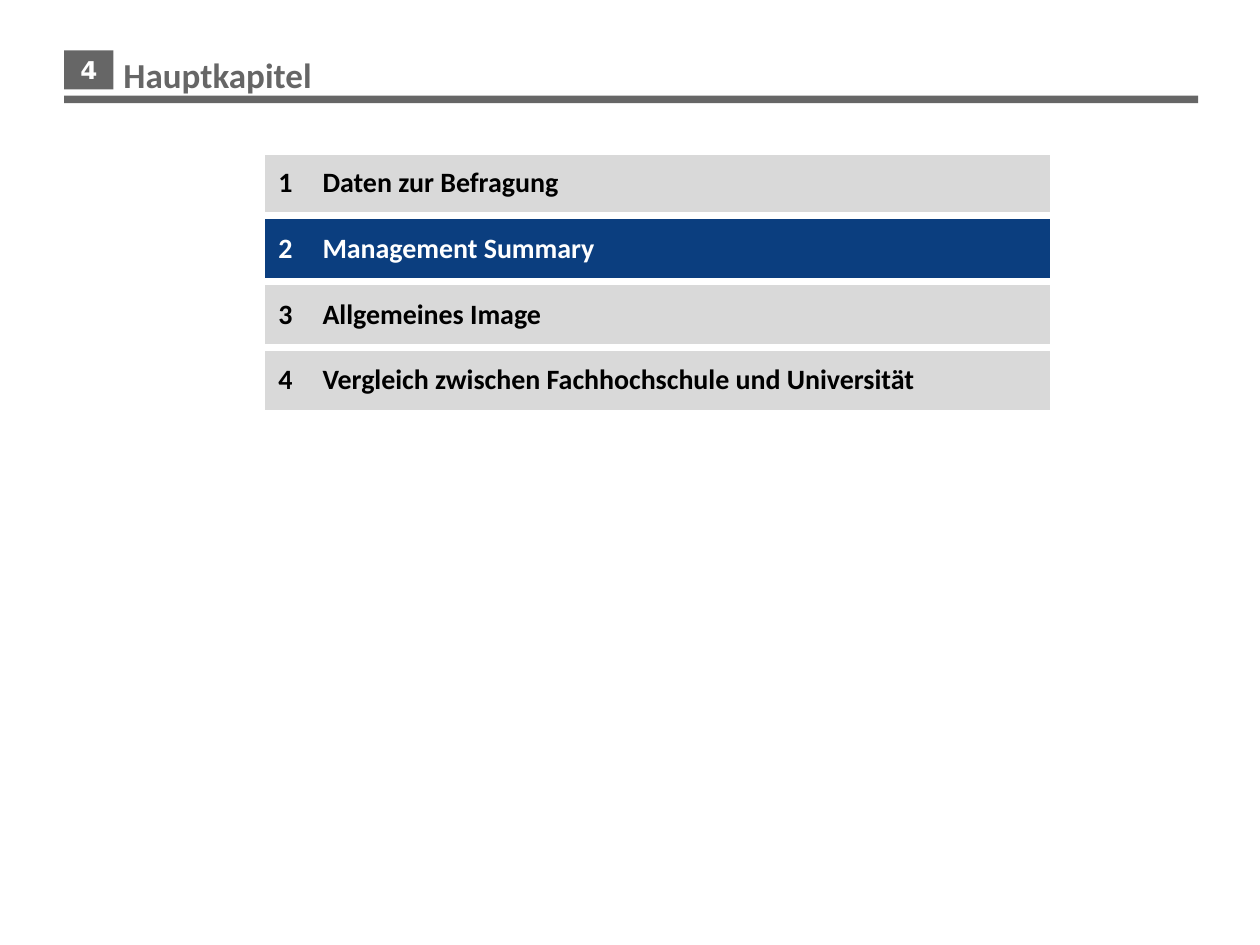
from dataclasses import dataclass

from lxml import etree
from pptx import Presentation
from pptx.dml.color import RGBColor
from pptx.enum import shapes, text
from pptx.oxml import ns
from pptx.util import Inches, Pt


@dataclass(frozen=True)
class Theme:
    gray: str = "666666"
    row: str = "D9D9D9"
    active_row: str = "0B3E7F"
    black: str = "000000"
    white: str = "FFFFFF"
    font: str = "Calibri"
    number_font: str = "DejaVu Sans"
    title_size: int = 20
    chapter_size: int = 16
    number_size: int = 14
    outer_border: float = 6
    inner_border: float = 4.5


THEME = Theme()
CHAPTERS = [
    "Daten zur Befragung",
    "Management Summary",
    "Allgemeines Image",
    "Vergleich zwischen Fachhochschule und Universität",
]
ACTIVE_CHAPTER = 2


def write(frame, content, *, size, color, font=THEME.font,
          align=text.PP_ALIGN.LEFT):
    paragraph = frame.paragraphs[0]
    paragraph.alignment = align
    run = paragraph.add_run()
    run.text = content
    run.font.name = font
    run.font.size = Pt(size)
    run.font.bold = True
    run.font.color.rgb = RGBColor.from_string(color)


def add_bar(slide, left, top, width, height):
    bar = slide.shapes.add_shape(
        shapes.MSO_SHAPE.RECTANGLE,
        Inches(left), Inches(top), Inches(width), Inches(height))
    bar.shadow.inherit = False
    bar.fill.solid()
    bar.fill.fore_color.rgb = RGBColor.from_string(THEME.gray)
    bar.line.fill.background()
    return bar


def add_page_number(slide, number):
    badge = add_bar(slide, 0.51, 0.4, 0.39, 0.31)
    badge.text_frame.word_wrap = False
    badge.text_frame.vertical_anchor = text.MSO_ANCHOR.MIDDLE
    write(badge.text_frame, number, size=THEME.number_size, color=THEME.white,
          font=THEME.number_font, align=text.PP_ALIGN.CENTER)


def set_title(slide, content):
    title = slide.shapes.title
    title.left, title.top = Inches(0.88), Inches(0.36)
    title.width, title.height = Inches(8.67), Inches(0.47)
    title.text_frame.vertical_anchor = text.MSO_ANCHOR.MIDDLE
    write(title.text_frame, content, size=THEME.title_size, color=THEME.gray)


def set_borders(cell, left, right, top, bottom):
    """Draw white borders with the given point widths; 0 means no line."""
    properties = cell._tc.get_or_add_tcPr()
    for side, width in zip("LRTB", (left, right, top, bottom)):
        line = etree.SubElement(properties, ns.qn(f"a:ln{side}"),
                                w=str(Pt(width)))
        if width:
            fill = etree.SubElement(line, ns.qn("a:solidFill"))
            etree.SubElement(fill, ns.qn("a:srgbClr"), val=THEME.white)
        else:
            etree.SubElement(line, ns.qn("a:noFill"))


def add_agenda(slide, chapters, active):
    table = slide.shapes.add_table(
        len(chapters), 2,
        Inches(2.07), Inches(1.19), Inches(6.3), Inches(2.09)).table
    table.first_row = table.horz_banding = False
    for column, width in zip(table.columns, (0.39, 5.91)):
        column.width = Inches(width)

    outer, inner = THEME.outer_border, THEME.inner_border
    for index, chapter in enumerate(chapters):
        is_active = index + 1 == active
        fill = THEME.active_row if is_active else THEME.row
        color = THEME.white if is_active else THEME.black
        top = inner if index else outer
        number_cell, name_cell = table.rows[index].cells
        set_borders(number_cell, outer, 0, top, inner)
        set_borders(name_cell, 0, outer, top, inner)
        for cell, content, align in (
                (number_cell, str(index + 1), text.PP_ALIGN.CENTER),
                (name_cell, chapter, text.PP_ALIGN.LEFT)):
            cell.fill.solid()
            cell.fill.fore_color.rgb = RGBColor.from_string(fill)
            cell.vertical_anchor = text.MSO_ANCHOR.MIDDLE
            cell.margin_left = cell.margin_right = Inches(0.1)
            cell.margin_top = cell.margin_bottom = Inches(0.08)
            write(cell.text_frame, content, size=THEME.chapter_size,
                  color=color, align=align)


def main():
    presentation = Presentation()
    presentation.slide_width = Inches(10)
    presentation.slide_height = Inches(7.5)
    title_only = presentation.slide_layouts[5]
    slide = presentation.slides.add_slide(title_only)

    add_page_number(slide, "4")
    add_bar(slide, 0.51, 0.76, 9, 0.06)
    add_agenda(slide, CHAPTERS, ACTIVE_CHAPTER)
    set_title(slide, "Hauptkapitel")
    presentation.save("out.pptx")


if __name__ == "__main__":
    main()
